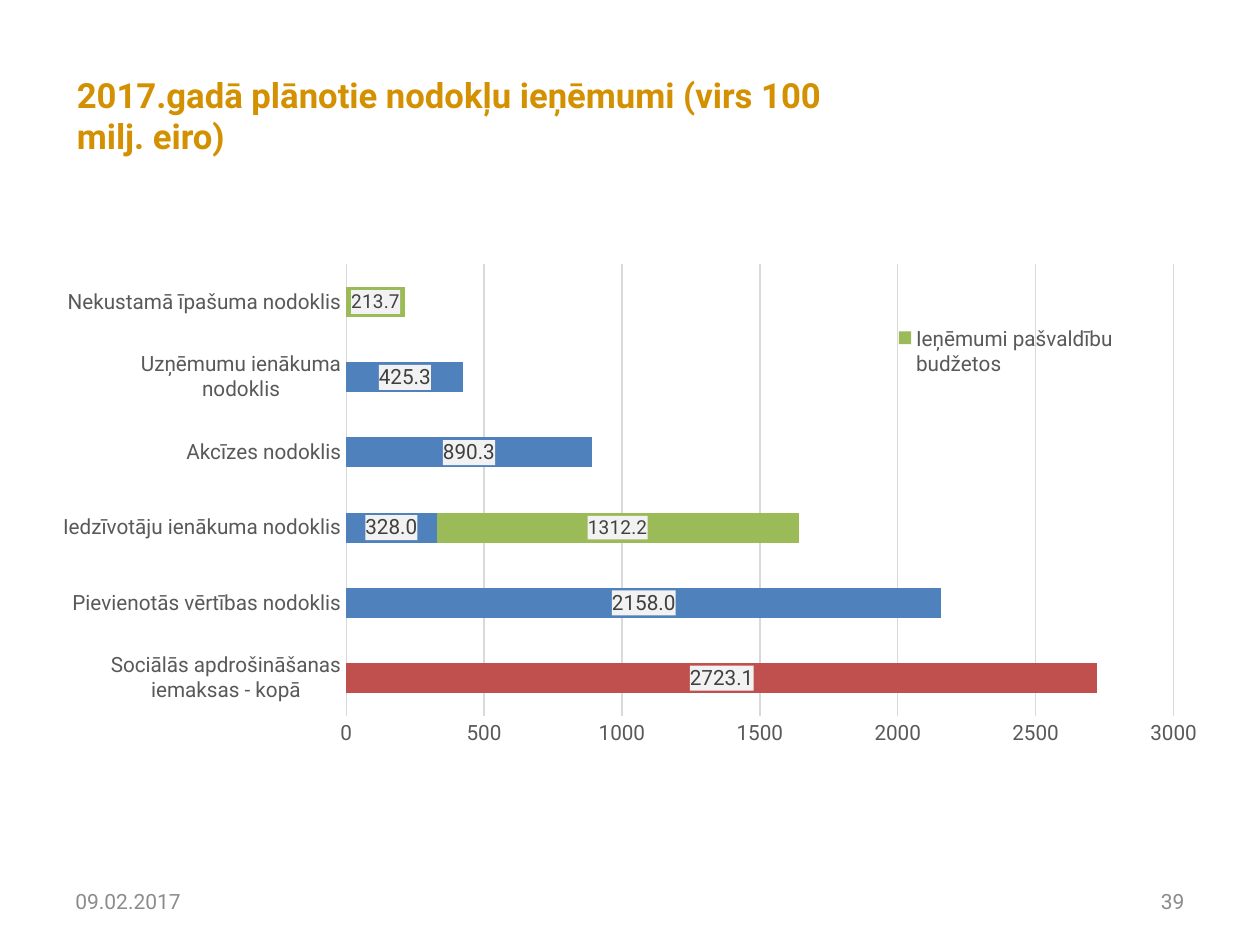
import pptx
import pptx.chart.data
import pptx.dml.color
import pptx.enum.chart
import pptx.enum.text
import pptx.oxml
import pptx.oxml.ns
import pptx.util

Inches = pptx.util.Inches
Pt = pptx.util.Pt
Color = pptx.dml.color.RGBColor
Align = pptx.enum.text.PP_ALIGN
Middle = pptx.enum.text.MSO_ANCHOR.MIDDLE
Tick = pptx.enum.chart.XL_TICK_MARK
qn = pptx.oxml.ns.qn

GOLD = Color(0xD3, 0x90, 0x01)
BLUE = Color(0x4F, 0x81, 0xBD)
RED = Color(0xC0, 0x50, 0x4D)
GREEN = Color(0x9B, 0xBB, 0x59)
BLACK = Color(0, 0, 0)
DARK = Color(0x40, 0x40, 0x40)
TEXT = Color(0x59, 0x59, 0x59)
GRAY = Color(0x8C, 0x8C, 0x8C)
GRID = Color(0xD9, 0xD9, 0xD9)
FONT = "Roboto"


def style(font, size, color):
    font.name = FONT
    font.size = Pt(size)
    font.color.rgb = color


def layout(x, y, wide, high, inner=False):
    marks = {"xMode": "edge", "yMode": "edge", "x": x, "y": y, "w": wide, "h": high}
    if inner:
        marks = {"layoutTarget": "inner", **marks}
    body = "".join(f'<c:{key} val="{val}"/>' for key, val in marks.items())
    return pptx.oxml.parse_xml(
        f'<c:layout {pptx.oxml.ns.nsdecls("c")}><c:manualLayout>{body}</c:manualLayout></c:layout>')


deck = pptx.Presentation()
deck.slide_width = Inches(10)
deck.slide_height = Inches(7.5)
slide = deck.slides.add_slide(deck.slide_layouts[5])

data = pptx.chart.data.CategoryChartData()
data.categories = [
    "Sociālās apdrošināšanas iemaksas - kopā",
    "Pievienotās vērtības nodoklis",
    "Iedzīvotāju ienākuma nodoklis",
    "Akcīzes nodoklis",
    "Uzņēmumu ienākuma nodoklis",
    "Nekustamā īpašuma nodoklis",
]
funds = [
    ("Ieņēmumi valsts pamatbudžetā", [None, 2158, 328, 890.3, 425.3, None], BLUE, 12),
    ("Ieņēmumi valsts speciālajā budžetā", [2723.1] + [None] * 5, RED, 12),
    ("Ieņēmumi pašvaldību budžetos", [None, None, 1312.2, None, None, 213.7], GREEN, 11),
]
for name, values, color, size in funds:
    data.add_series(name, values)
chart = slide.shapes.add_chart(
    pptx.enum.chart.XL_CHART_TYPE.BAR_STACKED,
    Inches(0.5), Inches(1.98), Inches(9), Inches(3.98), data).chart
chart.has_title = False
style(chart.font, 10, BLACK)

plot = chart.plots[0]
plot.gap_width = 150
plot.overlap = 100
plot.vary_by_categories = False
for series, (name, values, color, size) in zip(plot.series, funds):
    series.format.fill.solid()
    series.format.fill.fore_color.rgb = color
    series.invert_if_negative = False
    labels = series.data_labels
    labels.show_value = True
    labels.number_format = "0.0"
    labels.number_format_is_linked = False
    labels.position = pptx.enum.chart.XL_LABEL_POSITION.CENTER
    style(labels.font, size, DARK)
    back = pptx.oxml.parse_xml(
        f'<c:spPr {pptx.oxml.ns.nsdecls("c", "a")}><a:solidFill>'
        '<a:srgbClr val="F2F2F2"/></a:solidFill></c:spPr>')
    labels._element.find(qn("c:numFmt")).addnext(back)

for axis in (chart.category_axis, chart.value_axis):
    axis.major_tick_mark = Tick.NONE
    axis.minor_tick_mark = Tick.NONE
    style(axis.tick_labels.font, 12, TEXT)
side = chart.category_axis.format.line
scale = chart.value_axis
scale.minimum_scale = 0
scale.maximum_scale = 3000
scale.major_unit = 500
scale.tick_labels.number_format = "0"
scale.tick_labels.number_format_is_linked = False
scale.format.line.fill.background()
scale.has_major_gridlines = True
for line in (side, scale.major_gridlines.format.line):
    line.color.rgb = GRID
    line.width = Pt(0.75)

chart.has_legend = True
legend = chart.legend
legend.position = pptx.enum.chart.XL_LEGEND_POSITION.RIGHT
legend.include_in_layout = False
style(legend.font, 12, TEXT)
area = chart._chartSpace.chart.plotArea
for part in (area, legend._element):
    for old in part.findall(qn("c:layout")):
        part.remove(old)
area.insert(0, layout(0.25, 0.03, 0.74, 0.9, True))
spot = legend._element.find(qn("c:legendPos"))
spot.addnext(layout(0.73, 0.14, 0.22, 0.13))
for index in (2, 1):
    spot.addnext(pptx.oxml.parse_xml(
        f'<c:legendEntry {pptx.oxml.ns.nsdecls("c")}><c:idx val="{index}"/>'
        '<c:delete val="1"/></c:legendEntry>'))

title = slide.shapes.title
title.left, title.top = Inches(0.51), Inches(0.68)
title.width, title.height = Inches(6.22), Inches(0.47)
frame = title.text_frame
frame.auto_size = pptx.enum.text.MSO_AUTO_SIZE.NONE
frame.vertical_anchor = Middle
frame.paragraphs[0].alignment = Align.LEFT
run = frame.paragraphs[0].add_run()
run.text = "2017.gadā plānotie nodokļu ieņēmumi (virs 100 milj. eiro)"
style(run.font, 19.8, GOLD)
run.font.bold = True

for left, words, align in ((7.17, "39", Align.RIGHT), (0.5, "09.02.2017", Align.LEFT)):
    box = slide.shapes.add_textbox(Inches(left), Inches(6.95), Inches(2.33), Inches(0.4))
    frame = box.text_frame
    frame.word_wrap = True
    frame.vertical_anchor = Middle
    frame.paragraphs[0].alignment = align
    run = frame.paragraphs[0].add_run()
    run.text = words
    style(run.font, 12, GRAY)

deck.save("out.pptx")
